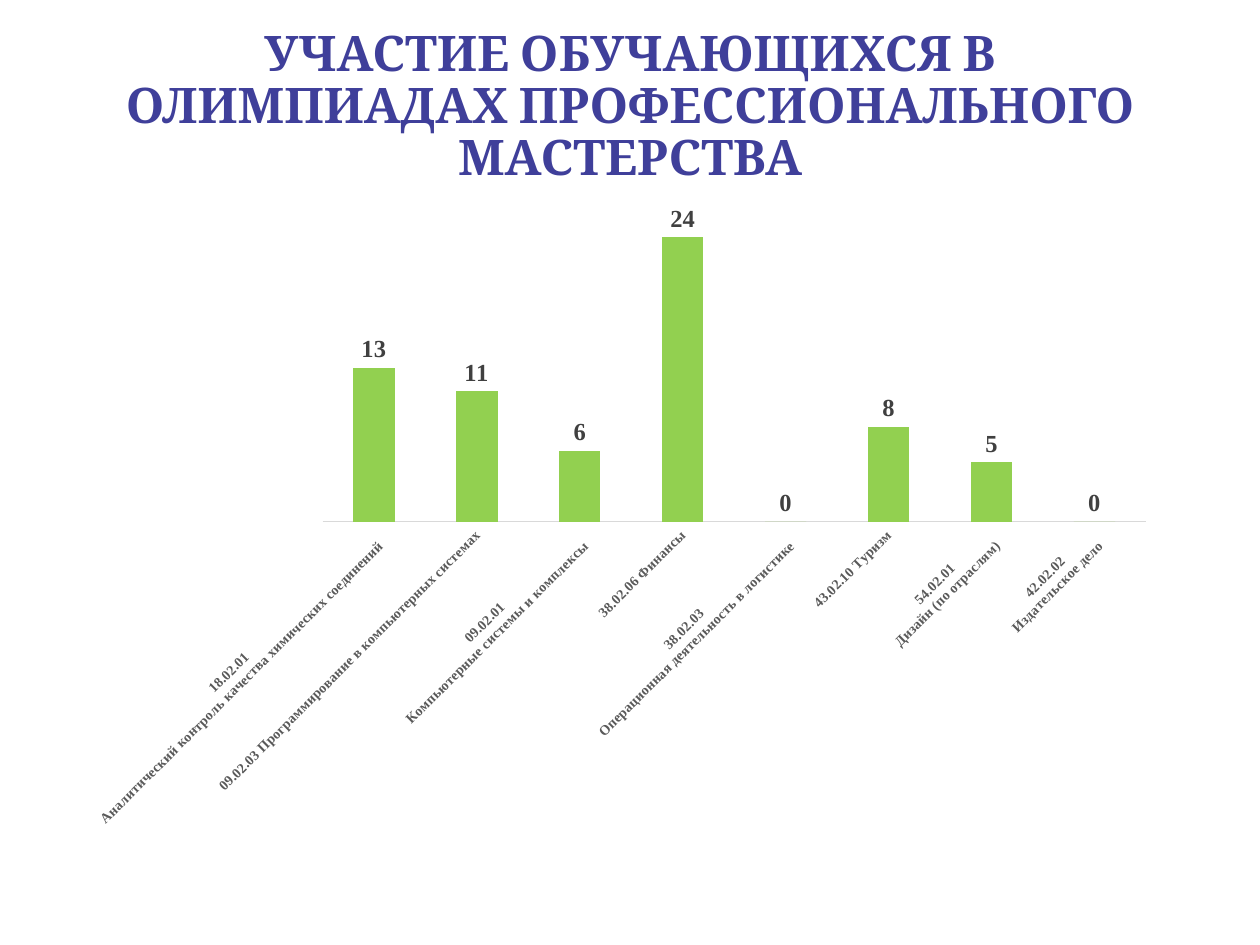
from dataclasses import dataclass

from pptx import Presentation
from pptx import util as u
from pptx.chart.data import CategoryChartData
from pptx.dml.color import RGBColor
from pptx.enum import chart as ch
from pptx.enum import text as t


@dataclass(frozen=True)
class Theme:
    heading_font: str = "Cambria"
    chart_font: str = "Times New Roman"
    heading: str = "3F3F9A"
    bar: str = "92D050"
    value: str = "404040"
    specialty: str = "595959"
    baseline: str = "D9D9D9"
    heading_size: int = 28
    value_size: int = 14
    specialty_size: int = 8


THEME = Theme()
SLIDE_W, SLIDE_H = u.Inches(10), u.Inches(7.5)

HEADING = "УЧАСТИЕ ОБУЧАЮЩИХСЯ В ОЛИМПИАДАХ ПРОФЕССИОНАЛЬНОГО МАСТЕРСТВА"
PARTICIPANTS = {
    "18.02.01 \nАналитический контроль качества химических соединений": 13,
    "09.02.03 Программирование в компьютерных системах": 11,
    "09.02.01 \nКомпьютерные системы и комплексы": 6,
    "38.02.06 Финансы": 24,
    "38.02.03 \nОперационная деятельность в логистике": 0,
    "43.02.10 Туризм": 8,
    "54.02.01 \nДизайн (по отраслям)": 5,
    "42.02.02 \nИздательское дело": 0,
}


def share_box(left, top, width, height):
    return (round(SLIDE_W * left), round(SLIDE_H * top),
            round(SLIDE_W * width), round(SLIDE_H * height))


def style_font(font, name, size, color):
    font.name = name
    font.size = u.Pt(size)
    font.bold = True
    font.color.rgb = RGBColor.from_string(color)


def write_text(frame, content, *, font, size, color, align, spacing):
    frame.word_wrap = True
    paragraph = frame.paragraphs[0]
    paragraph.alignment = align
    paragraph.line_spacing = spacing
    run = paragraph.add_run()
    run.text = content
    style_font(run.font, font, size, color)


def place_heading(slide, box):
    heading = slide.shapes.title
    heading.left, heading.top, heading.width, heading.height = box
    frame = heading.text_frame
    frame.auto_size = t.MSO_AUTO_SIZE.NONE
    frame.vertical_anchor = t.MSO_ANCHOR.TOP
    frame.margin_top = u.Inches(0.09)
    write_text(frame, HEADING, font=THEME.heading_font, size=THEME.heading_size,
               color=THEME.heading, align=t.PP_ALIGN.CENTER, spacing=0.88)


def place_participation(slide, box):
    results = CategoryChartData(number_format="General")
    results.categories = list(PARTICIPANTS)
    results.add_series("Series 1", list(PARTICIPANTS.values()))
    chart = slide.shapes.add_chart(
        ch.XL_CHART_TYPE.COLUMN_CLUSTERED, *box, results).chart
    chart.has_legend = False
    chart.has_title = False
    style_font(chart.font, THEME.chart_font, THEME.value_size, "000000")

    columns = chart.plots[0]
    columns.gap_width = 150
    columns.overlap = -25
    columns.vary_by_categories = False
    bars = columns.series[0]
    bars.format.fill.solid()
    bars.format.fill.fore_color.rgb = RGBColor.from_string(THEME.bar)
    counts = bars.data_labels
    counts.show_value = True
    counts.position = ch.XL_LABEL_POSITION.OUTSIDE_END
    style_font(counts.font, THEME.chart_font, THEME.value_size, THEME.value)

    chart.value_axis.visible = False
    chart.value_axis.has_major_gridlines = False
    specialties = chart.category_axis
    specialties.major_tick_mark = ch.XL_TICK_MARK.NONE
    specialties.minor_tick_mark = ch.XL_TICK_MARK.NONE
    specialties.format.line.color.rgb = RGBColor.from_string(THEME.baseline)
    specialties.format.line.width = u.Pt(0.75)
    style_font(specialties.tick_labels.font, THEME.chart_font,
               THEME.specialty_size, THEME.specialty)
    specialties._element.txPr.bodyPr.set("rot", str(-45 * 60000))


def main():
    deck = Presentation()
    deck.slide_width, deck.slide_height = SLIDE_W, SLIDE_H
    slide = deck.slides.add_slide(deck.slide_layouts.get_by_name("Title Only"))
    place_heading(slide, share_box(0.05, 0.02, 0.9, 0.17))
    place_participation(slide, (u.Inches(0.5), u.Inches(1.21),
                                u.Inches(8.77), u.Inches(5.46)))
    deck.save("out.pptx")


if __name__ == "__main__":
    main()
